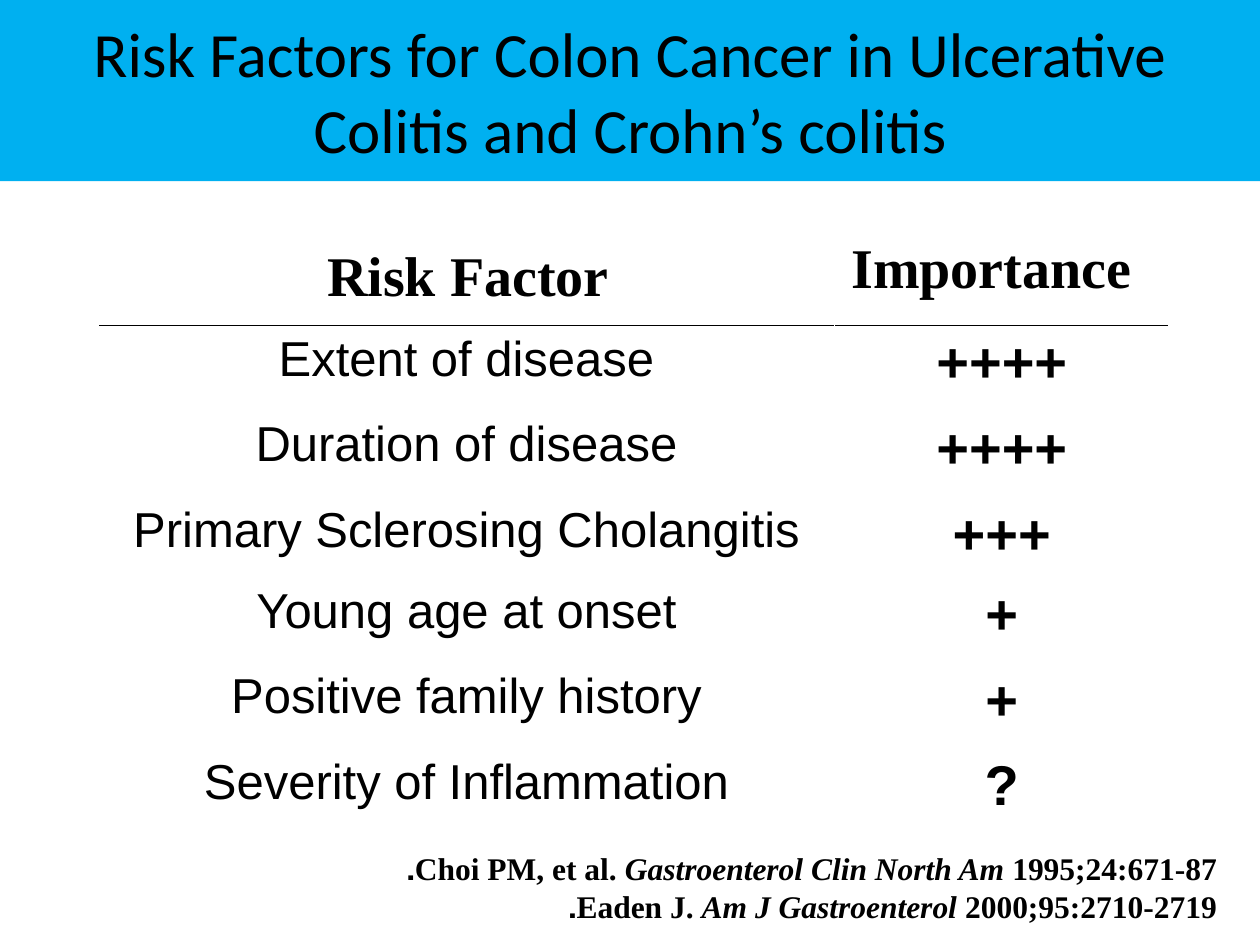
from lxml.etree import SubElement
from pptx import Presentation
from pptx.dml.color import RGBColor
from pptx.enum.text import MSO_ANCHOR, MSO_AUTO_SIZE, PP_ALIGN
from pptx.oxml.ns import qn
from pptx.util import Pt

SKY = RGBColor(0x00, 0xB0, 0xF0)
BLACK = RGBColor(0x00, 0x00, 0x00)
SERIF = "Times New Roman"

RISK_FACTORS = [
    ("Extent of disease", "++++"),
    ("Duration of disease", "++++"),
    ("Primary Sclerosing Cholangitis", "+++"),
    ("Young age at onset", "+"),
    ("Positive family history", "+"),
    ("Severity of Inflammation", "?"),
]
COLUMN_WIDTHS = (421, 191)
ROW_HEIGHTS = (49, 49, 46, 49, 49, 49)
REFERENCES = [
    ("Choi PM, et al. ", "Gastroenterol Clin North Am", " 1995;24:671-87."),
    ("Eaden J. ", "Am J Gastroenterol", " 2000;95:2710-2719."),
]


def style(paragraph, family, size, bold=False, align=PP_ALIGN.CENTER):
    paragraph.alignment = align
    paragraph.font.name = family
    paragraph.font.size = Pt(size)
    paragraph.font.bold = bold
    paragraph.font.color.rgb = BLACK


def set_right_to_left(paragraph):
    paragraph._p.get_or_add_pPr().set("rtl", "1")


def set_space_before(paragraph, percent):
    paragraph.space_before = Pt(0)
    spacing = paragraph._p.pPr.find(qn("a:spcBef"))
    spacing.clear()
    SubElement(spacing, qn("a:spcPct"), val=str(percent * 1000))


def add_top_border(cell):
    border = SubElement(cell._tc.get_or_add_tcPr(), qn("a:lnT"), w=str(Pt(1)))
    fill = SubElement(border, qn("a:solidFill"))
    SubElement(fill, qn("a:srgbClr"), val=str(BLACK))


def add_title(slide, wording):
    title = slide.shapes.title
    title.left, title.top, title.width, title.height = Pt(0), Pt(0), Pt(720), Pt(103.5)
    title.fill.solid()
    title.fill.fore_color.rgb = SKY
    title.text_frame.text = wording
    title.text_frame.vertical_anchor = MSO_ANCHOR.MIDDLE
    heading = title.text_frame.paragraphs[0]
    style(heading, "Calibri", 36)
    set_right_to_left(heading)


def add_text_frame(slide, left, top, width, height):
    frame = slide.shapes.add_textbox(Pt(left), Pt(top), Pt(width), Pt(height)).text_frame
    frame.word_wrap = True
    frame.auto_size = MSO_AUTO_SIZE.SHAPE_TO_FIT_TEXT
    return frame


def add_column_heading(slide, wording, left, top, width):
    frame = add_text_frame(slide, left, top, width, 45.5)
    frame.text = wording
    heading = frame.paragraphs[0]
    style(heading, SERIF, 32, bold=True)
    set_right_to_left(heading)


def add_factor_table(slide):
    table = slide.shapes.add_table(
        len(RISK_FACTORS), len(COLUMN_WIDTHS),
        Pt(56), Pt(186), Pt(sum(COLUMN_WIDTHS)), Pt(sum(ROW_HEIGHTS)),
    ).table
    table.first_row = False
    table.horz_banding = False
    for column, width in zip(table.columns, COLUMN_WIDTHS):
        column.width = Pt(width)
    for row, height, entries in zip(table.rows, ROW_HEIGHTS, RISK_FACTORS):
        row.height = Pt(height)
        for cell, entry, size, bold in zip(row.cells, entries, (28, 32), (False, True)):
            cell.text = entry
            paragraph = cell.text_frame.paragraphs[0]
            style(paragraph, "Arial", size, bold)
            set_space_before(paragraph, 20)
            if entries is RISK_FACTORS[0]:
                add_top_border(cell)
            cell.fill.background()


def add_references(slide):
    frame = add_text_frame(slide, 50.5, 481.5, 652, 72)
    for index, (authors, journal, citation) in enumerate(REFERENCES):
        reference = frame.add_paragraph() if index else frame.paragraphs[0]
        style(reference, SERIF, 18, bold=True, align=PP_ALIGN.RIGHT)
        set_right_to_left(reference)
        for wording in (authors, journal, citation):
            run = reference.add_run()
            run.text = wording
            run.font.italic = wording == journal


def main():
    presentation = Presentation()
    presentation.slide_width, presentation.slide_height = Pt(720), Pt(540)
    slide = presentation.slides.add_slide(presentation.slide_layouts[5])
    add_title(slide, "Risk Factors for Colon Cancer in Ulcerative Colitis and Crohn’s colitis")
    add_factor_table(slide)
    add_column_heading(slide, "Risk Factor", 153, 134, 229)
    add_column_heading(slide, "Importance", 466, 129.5, 201)
    add_references(slide)
    presentation.save("out.pptx")


if __name__ == "__main__":
    main()
